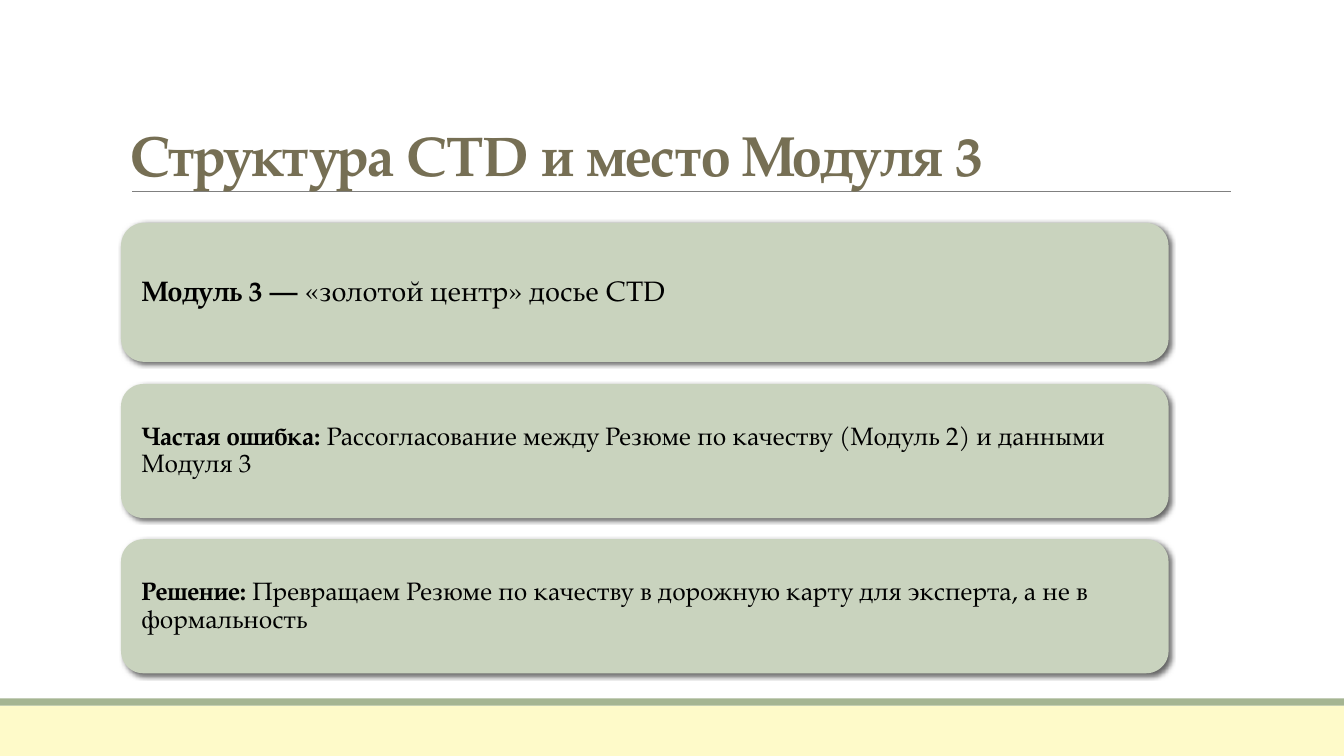
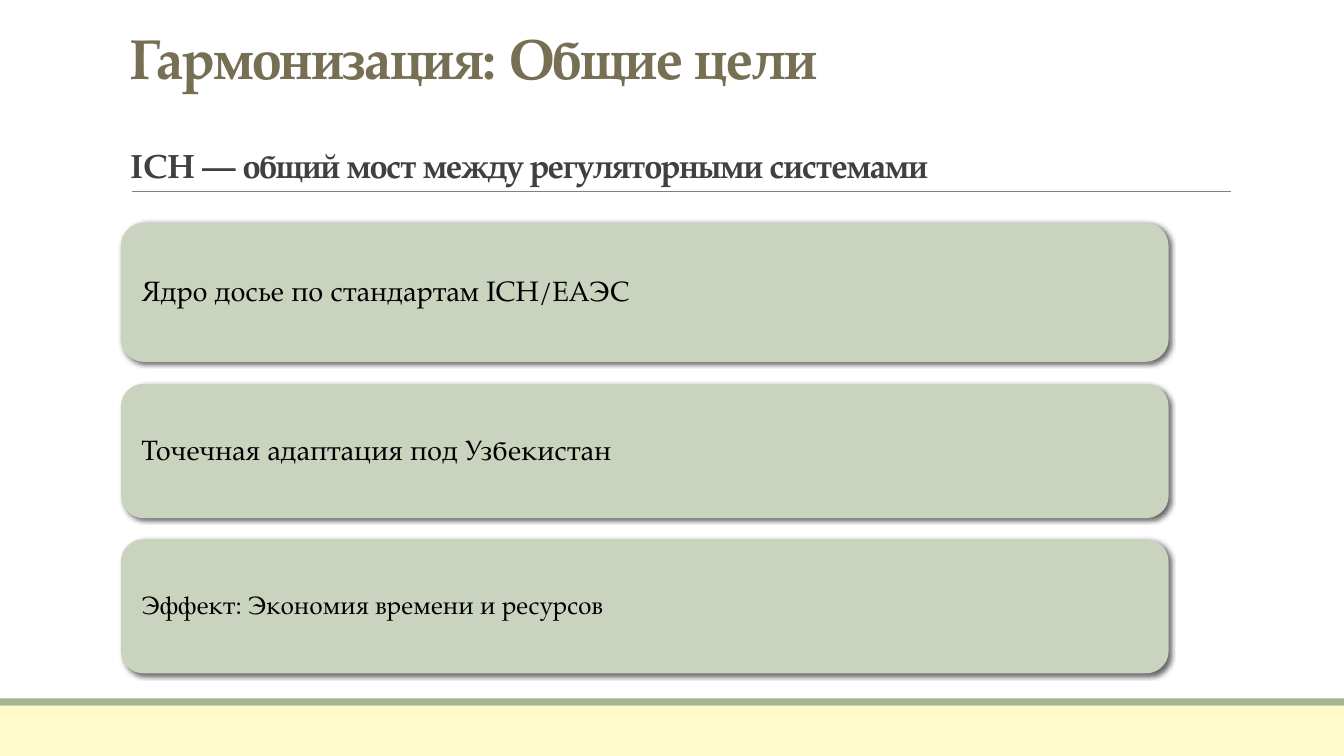
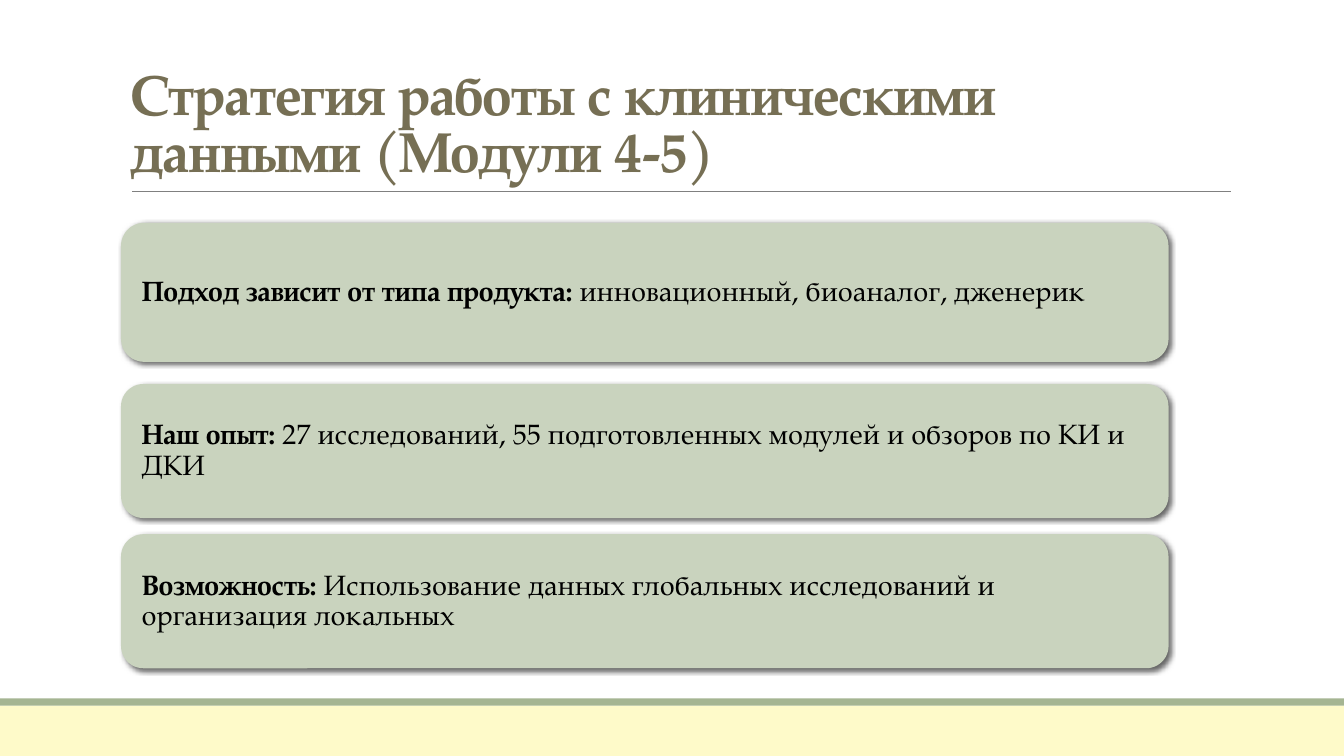
from lxml.etree import SubElement
from pptx import Presentation
from pptx.dml.color import RGBColor
from pptx.enum.shapes import MSO_CONNECTOR as CONN, MSO_SHAPE as SHAPE
from pptx.enum.text import MSO_ANCHOR as ANCHOR, PP_ALIGN as ALIGN
from pptx.oxml.ns import qn
from pptx.util import Inches, Pt

# Shared look
FONT = "TeX Gyre Pagella"
OLIVE = RGBColor(0x76, 0x6F, 0x54)
DARK = RGBColor(0x40, 0x40, 0x40)
BLACK = RGBColor(0, 0, 0)
GREY = RGBColor(0x80, 0x80, 0x80)
SAGE = RGBColor(0xA5, 0xB5, 0x92)
PALE_SAGE = RGBColor(0xC9, 0xD3, 0xBE)
CREAM = RGBColor(0xFE, 0xFA, 0xC9)

# Shared layout, in inches
SLIDE_W, SLIDE_H = 13.33, 7.5
LEFT = 1.2
TITLE_W, TITLE_H = 11, 1.59
RULE_X, RULE_Y, RULE_W = 1.31, 1.9, 10.9
FOOTER_H, STRIPE_H = 0.5, 0.07
CARD_W, CARD_TOP = 10.39, 2.21
CARD_HEIGHTS = (1.38, 1.33, 1.33)
CARD_INSET = 0.14

# Slide content: title lines are (text, size, colour, space after);
# cards are (size, bold lead, plain text)
SLIDES = [
    dict(
        title=[("Структура CTD и место Модуля 3", 40, OLIVE, 0)],
        title_bottom=1.91,
        gaps=(0.22, 0.21),
        cards=[
            (20, "Модуль 3 —", " «золотой центр» досье CTD"),
            (18, "Частая ошибка:", " Рассогласование между Резюме по качеству "
                                   "(Модуль 2) и данными Модуля 3"),
            (18, "Решение:", " Превращаем Резюме по качеству в дорожную карту "
                             "для эксперта, а не в формальность"),
        ],
    ),
    dict(
        title=[("Гармонизация: Общие цели", 40, OLIVE, 43),
               ("ICH — общий мост между регуляторными системами", 24, DARK, 0)],
        title_bottom=1.89,
        gaps=(0.22, 0.21),
        cards=[
            (20, "", "Ядро досье по стандартам ICH/ЕАЭС"),
            (20, "", "Точечная адаптация под Узбекистан"),
            (18, "", "Эффект: Экономия времени и ресурсов"),
        ],
    ),
    dict(
        title=[("Стратегия работы с клиническими данными (Модули 4-5)", 40, OLIVE, 0)],
        title_bottom=1.87,
        gaps=(0.22, 0.16),
        cards=[
            (20, "Подход зависит от типа продукта:",
             " инновационный, биоаналог, дженерик"),
            (20, "Наш опыт:", " 27 исследований, 55 подготовленных модулей "
                              "и обзоров по КИ и ДКИ"),
            (20, "Возможность:", " Использование данных глобальных исследований "
                                 "и организация локальных"),
        ],
    ),
]


def add_run(p, text, size, color, bold=False):
    r = p.add_run()
    r.text = text
    r.font.name = FONT
    r.font.size = Pt(size)
    r.font.bold = bold
    r.font.color.rgb = color
    return r


def add_box(s, kind, x, y, w, h, fill):
    sp = s.shapes.add_shape(kind, Inches(x), Inches(y), Inches(w), Inches(h))
    sp.shadow.inherit = False
    sp.fill.solid()
    sp.fill.fore_color.rgb = fill
    sp.line.fill.background()
    return sp


def add_soft_shadow(sp):
    effects = sp._element.spPr.find(qn("a:effectLst"))
    shadow = SubElement(effects, qn("a:outerShdw"), blurRad=str(Pt(3.5)),
                        dist=str(Pt(2)), dir="2700000", rotWithShape="0")
    color = SubElement(shadow, qn("a:srgbClr"), val=str(BLACK))
    SubElement(color, qn("a:alpha"), val="60000")


def add_frame(s):
    """Footer band, stripe above it and the rule under the title."""
    footer_y = SLIDE_H - FOOTER_H
    add_box(s, SHAPE.RECTANGLE, 0, footer_y, SLIDE_W, FOOTER_H, CREAM)
    add_box(s, SHAPE.RECTANGLE, 0, footer_y - STRIPE_H, SLIDE_W, STRIPE_H, SAGE)
    rule = s.shapes.add_connector(CONN.STRAIGHT, Inches(RULE_X), Inches(RULE_Y),
                                  Inches(RULE_X + RULE_W), Inches(RULE_Y))
    rule.line.color.rgb = GREY
    rule.line.width = Pt(0.5)
    SubElement(rule._element.spPr, qn("a:effectLst"))


def add_title(s, lines, bottom):
    tb = s.shapes.add_textbox(Inches(LEFT), Inches(bottom - TITLE_H),
                              Inches(TITLE_W), Inches(TITLE_H))
    tf = tb.text_frame
    tf.word_wrap = True
    tf.vertical_anchor = ANCHOR.BOTTOM
    for i, (text, size, color, after) in enumerate(lines):
        p = tf.add_paragraph() if i else tf.paragraphs[0]
        p.line_spacing = 0.85
        p.space_after = Pt(after)
        r = add_run(p, text, size, color, bold=True)
        r._r.get_or_add_rPr().set("spc", "-50")


def add_card(s, y, h, size, lead, text):
    sp = add_box(s, SHAPE.ROUNDED_RECTANGLE, LEFT, y, CARD_W, h, PALE_SAGE)
    add_soft_shadow(sp)
    tf = sp.text_frame
    tf.word_wrap = True
    tf.vertical_anchor = ANCHOR.MIDDLE
    tf.margin_left = tf.margin_right = Inches(CARD_INSET)
    p = tf.paragraphs[0]
    p.alignment = ALIGN.LEFT
    p.line_spacing = 0.9
    if lead:
        add_run(p, lead, size, BLACK, bold=True)
    add_run(p, text, size, BLACK)


def add_cards(s, cards, gaps):
    y = CARD_TOP
    for card, h, gap in zip(cards, CARD_HEIGHTS, (*gaps, 0)):
        add_card(s, y, h, *card)
        y += h + gap


def main():
    prs = Presentation()
    prs.slide_width, prs.slide_height = Inches(SLIDE_W), Inches(SLIDE_H)
    for content in SLIDES:
        s = prs.slides.add_slide(prs.slide_layouts[6])
        add_frame(s)
        add_title(s, content["title"], content["title_bottom"])
        add_cards(s, content["cards"], content["gaps"])
    prs.save("out.pptx")


if __name__ == "__main__":
    main()
